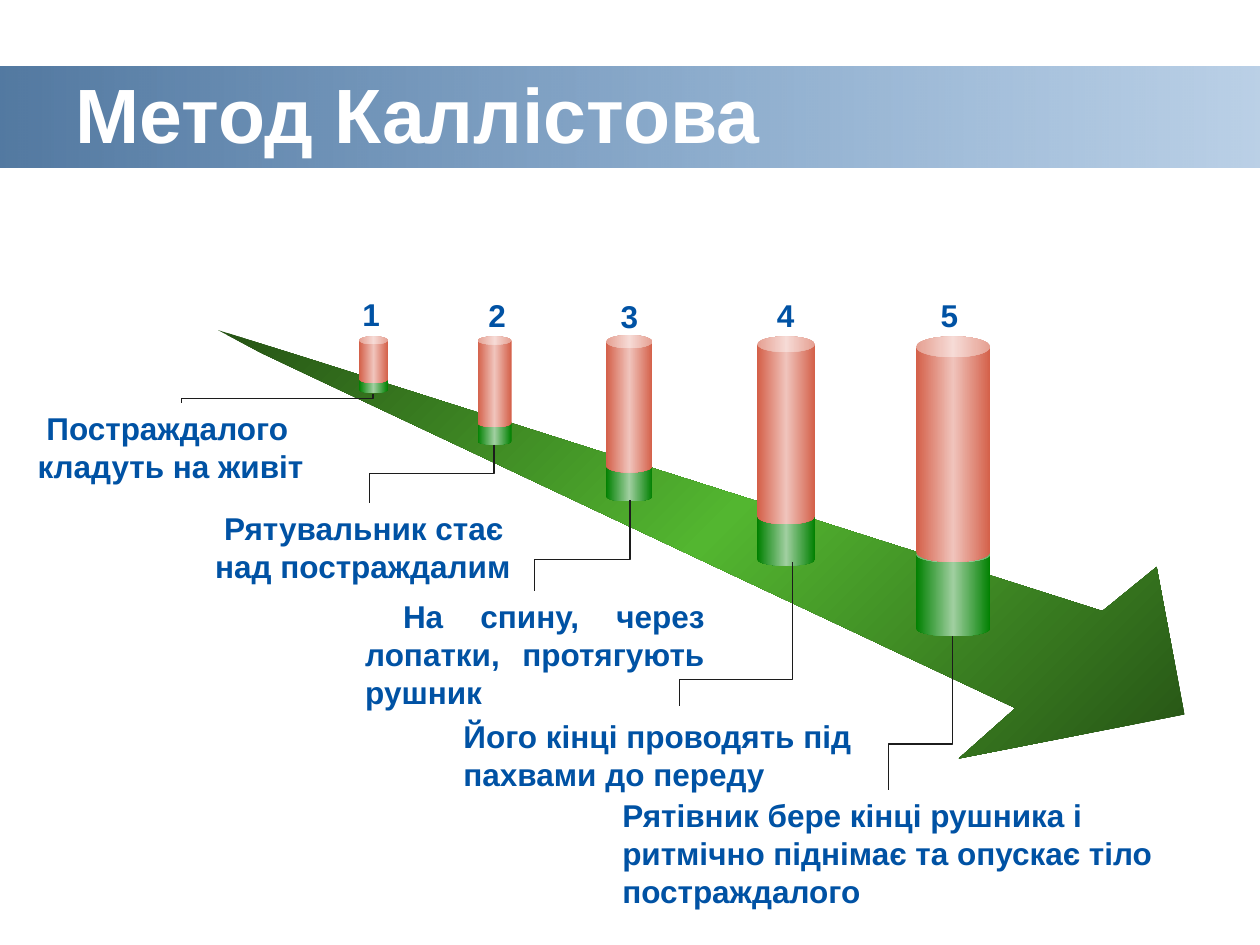
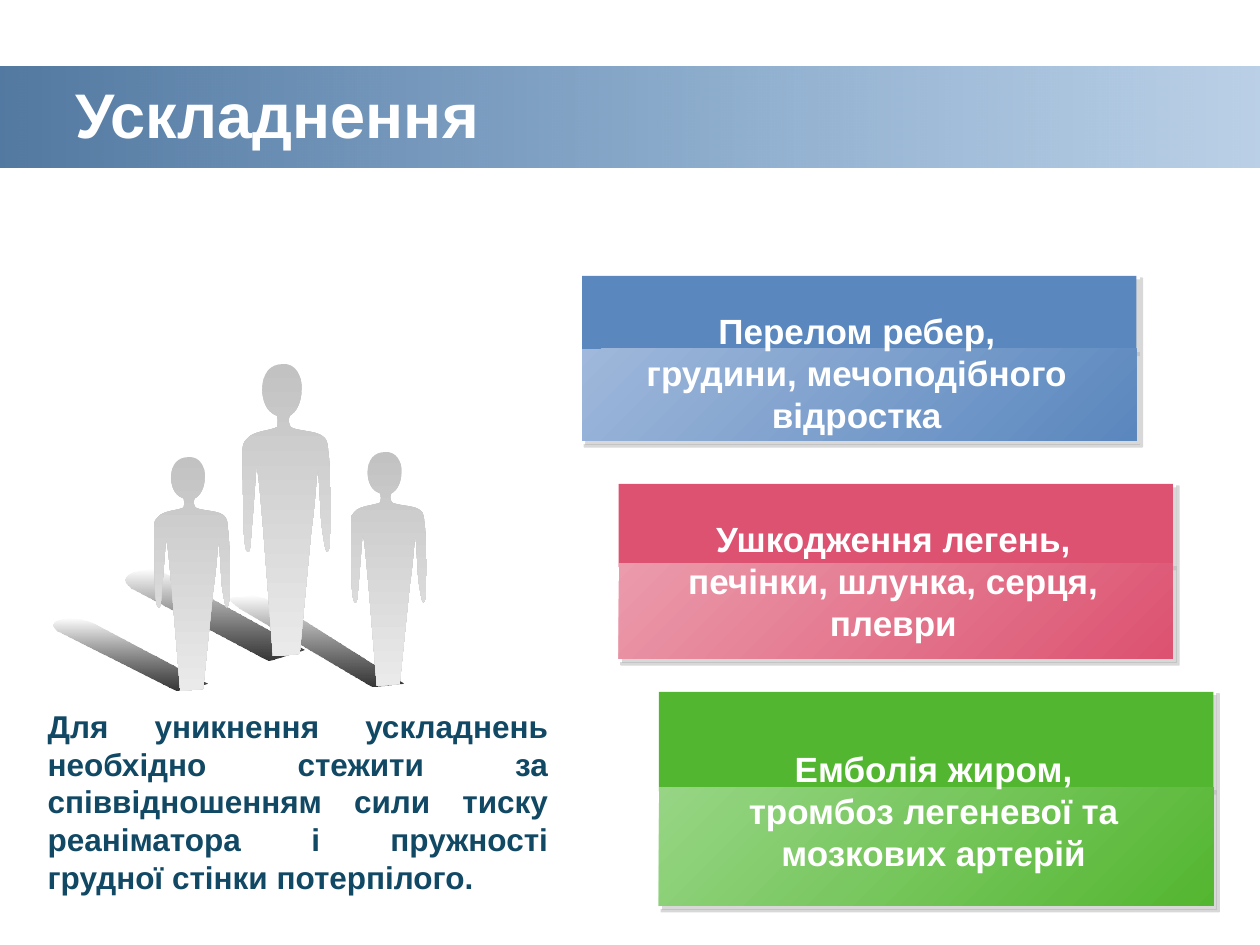
from dataclasses import dataclass

from lxml.etree import SubElement
from pptx import Presentation
from pptx.dml.color import RGBColor
from pptx.enum.shapes import MSO_CONNECTOR as CONNECTOR, MSO_SHAPE as SHAPE
from pptx.enum.text import MSO_ANCHOR as ANCHOR, PP_ALIGN as ALIGN
from pptx.oxml.ns import qn
from pptx.util import Pt

PX = 9144
FONT = "Arial"
WHITE = "FFFFFF"
BLUE = "0052A4"
TEAL = "114864"
INK = "1C1C1C"
SHADOW = "B2B2B2"
BAR = [(0, "003A75", 68), (100, BLUE, 27)]
ARROW = [(0, "265315"), (50, "53B630"), (100, "265315")]
GREEN_CAN = [(0, "008000"), (50, "A0CFA0"), (100, "008000")]
RED_CAN = [(0, "D45F48"), (50, "F0C4BC"), (100, "D45F48")]
BODY = [(0, "C2C2C2"), (100, "EAEAEA")]
CAST = [(0, "000000", 0), (100, "333333")]

ARROW_POINTS = [(73, 23), (0, 0), (34, 18), (633, 300), (588, 340),
                (767, 305), (745, 188), (702, 223)]
PERSON = [
    (50, 42), (57, 39, 62, 31, 62, 21), (63, 11, 56, 0, 43, 1),
    (30, 1, 22, 8, 22, 22), (23, 35, 30, 40, 37, 42),
    (38, 46, 38, 49, 37, 51), (30, 54, 13, 54, 7, 60),
    (0, 64, 2, 72, 2, 84), (3, 132), (4, 143, 5, 150, 7, 150),
    (11, 152, 10, 137, 12, 126), (16, 83), (18, 84, 20, 107, 23, 132),
    (33, 233), (60, 231), (72, 133), (77, 105, 77, 87, 79, 85),
    (82, 127), (84, 138, 86, 150, 88, 150), (91, 150, 92, 137, 92, 125),
    (93, 113, 91, 87, 90, 76), (88, 65, 90, 62, 83, 58),
    (77, 54, 56, 54, 51, 51), (49, 49, 48, 45, 50, 42),
]
CAST_SHADOWS = [
    (174, 470, [(146, 72), (121, 75), (17, 14), (0, 2, 15, 4, 20, 4),
                (25, 3, 28, 0, 49, 11), (146, 72)]),
    (89, 452, [(153, 63), (124, 72), (15, 15), (0, 3, 25, 0, 32, 0),
               (37, 0, 38, 1, 59, 12), (153, 63)]),
    (35, 487, [(130, 55), (105, 61), (11, 14), (0, 5, 19, 0, 39, 7),
               (130, 55)]),
]
PEOPLE = [(277, 358, (0.67, 0.8)), (191, 288, (0.78, 1)), (121, 362, (0.67, 0.8))]


@dataclass
class Step:
    number: str
    number_at: tuple
    left: int
    width: int
    red: tuple
    green: tuple
    leader: tuple
    label: str
    label_box: tuple
    indent: int = 0
    align: ALIGN = ALIGN.LEFT


STEPS = [
    Step("1", (247, 229), 285, 23, (267, 37, 0.27), (298, 14, 0.4),
         (296, 313, 144, 320, 0.5),
         "Постраждалого кладуть на живіт", (20, 320, 248, 71), 7),
    Step("2", (347, 230), 379, 27, (267, 72, 0.24), (333, 20, 0.27),
         (392, 353, 293, 399, 0.5),
         "Рятувальник стає над постраждалим", (161, 399, 263, 71), 7),
    Step("3", (452, 231), 481, 37, (266, 109, 0.28), (366, 32, 0.25),
         (500, 397, 424, 469, 0.65),
         "На спину, через лопатки, протягують рушник", (280, 469, 289, 101),
         30, ALIGN.JUSTIFY),
    Step("4", (576, 230), 601, 46, (267, 149, 0.27), (405, 44, 0.22),
         (629, 446, 539, 560, 0.82),
         "Його кінці проводять під пахвами до переду", (358, 564, 352, 71)),
    Step("5", (706, 230), 727, 59, (267, 179, 0.28), (434, 71, 0.21),
         (756, 505, 705, 627, 0.7),
         "Рятівник бере кінці рушника і ритмічно піднімає та опускає тіло "
         "постраждалого", (484, 627, 442, 101)),
]
PANELS = [
    ((461, 218, 443, 134), 61, 23, "5A87BE", "9FB8DB",
     "Перелом ребер, грудини, мечоподібного відростка"),
    ((490, 383, 443, 142), 66, 23, "DC5270", "EB9BAC",
     "Ушкодження легень, печінки, шлунка, серця, плеври"),
    ((522, 548, 443, 173), 79, 40, "53B630", "97D585",
     "Емболія жиром, тромбоз легеневої та мозкових артерій"),
]


def color(value):
    return RGBColor.from_string(value)


def emu(lengths):
    return [round(length * PX) for length in lengths]


def add_color(parent, value, alpha=100):
    node = SubElement(parent, qn("a:srgbClr"), val=value)
    if alpha < 100:
        SubElement(node, qn("a:alpha"), val=str(alpha * 1000))


def paint(shape, fill, angle=0, line=None, shadow=False):
    shape.shadow.inherit = False
    if isinstance(fill, str):
        shape.fill.solid()
        shape.fill.fore_color.rgb = color(fill)
    else:
        shape.fill.gradient()
        gradient = shape.element.spPr.find(qn("a:gradFill"))
        for child in list(gradient):
            gradient.remove(child)
        stops = SubElement(gradient, qn("a:gsLst"))
        for position, *tint in fill:
            add_color(SubElement(stops, qn("a:gs"), pos=str(position * 1000)), *tint)
        SubElement(gradient, qn("a:lin"), ang=str(angle * 60000), scaled="0")
    if line:
        shape.line.color.rgb = color(line)
        shape.line.width = Pt(0.75)
    else:
        shape.line.fill.background()
    if shadow:
        effects = shape.element.spPr.find(qn("a:effectLst"))
        outer = SubElement(effects, qn("a:outerShdw"), dist=str(Pt(2.8)),
                           dir=str(45 * 60000), algn="ctr", rotWithShape="0")
        add_color(outer, SHADOW, 50)
    return shape


def add_block(shapes, box, fill, kind=SHAPE.RECTANGLE, adjust=None, **style):
    shape = shapes.add_shape(kind, *emu(box))
    if adjust is not None:
        shape.adjustments[0] = adjust
    return paint(shape, fill, **style)


def add_text(shapes, box, text, size=18, tint=BLUE, align=ALIGN.LEFT,
             anchor=ANCHOR.TOP, indent=0):
    frame = shapes.add_textbox(*emu(box)).text_frame
    frame.word_wrap = True
    frame.vertical_anchor = anchor
    para = frame.paragraphs[0]
    para.alignment = align
    if indent:
        para._p.get_or_add_pPr().set("indent", str(indent * PX))
    span = para.add_run()
    span.text = text
    span.font.name = FONT
    span.font.size = Pt(size)
    span.font.bold = True
    span.font.color.rgb = color(tint)


def bend_segments(shape, outline):
    segments = list(shape.element.spPr.iter(qn("a:lnTo")))
    for node in outline[1:]:
        count = len(node) // 2
        group, segments = segments[:count], segments[count:]
        if count == 3:
            curve = group[0].makeelement(qn("a:cubicBezTo"))
            group[0].addprevious(curve)
            for segment in group:
                curve.append(segment[0])
                segment.getparent().remove(segment)


def add_outline(shapes, left, top, outline, fill, angle, zoom=(1, 1)):
    points = [emu((left + x * zoom[0], top + y * zoom[1]))
              for node in outline for x, y in zip(node[::2], node[1::2])]
    builder = shapes.build_freeform(*points[0], scale=1.0)
    builder.add_line_segments(points[1:], close=True)
    shape = builder.convert_to_shape()
    bend_segments(shape, outline)
    paint(shape, fill, angle)


def add_leader(shapes, start_x, start_y, end_x, end_y, bend):
    across, down = start_x - end_x, end_y - start_y
    left = (start_x + end_x - down) / 2
    top = (start_y + end_y - across) / 2
    leader = shapes.add_connector(
        CONNECTOR.ELBOW, *emu((left, top, left + down, top + across)))
    leader.line.color.rgb = color(INK)
    leader.line.width = Pt(0.75)
    properties = leader.element.spPr
    properties.find(qn("a:xfrm")).set("rot", str(90 * 60000))
    guides = properties.find(qn("a:prstGeom")).find(qn("a:avLst"))
    SubElement(guides, qn("a:gd"), name="adj1", fmla=f"val {round(bend * 100000)}")
    SubElement(properties, qn("a:effectLst"))


def add_bar(deck, layout):
    page = deck.slides.add_slide(layout)
    bar = add_block(page.shapes, (0, 53, 1000, 80), BAR)
    layout.shapes.element.append(bar.element)
    return page


def add_title(shapes, text, size):
    add_text(shapes, (50, 27, 650, 125), text, size=size, tint=WHITE,
             anchor=ANCHOR.MIDDLE)


def add_can(shapes, step, part, fill):
    top, height, adjust = part
    add_block(shapes, (step.left, top, step.width, height), fill,
              kind=SHAPE.CAN, adjust=adjust)


def add_panel(shapes, box, top_height, text_top, strong, pale, text):
    left, top, width, height = box
    group = shapes.add_group_shape().shapes
    add_block(group, box, WHITE, line=WHITE, shadow=True)
    add_block(group, (left + 1, top + 1, width - 3, top_height), strong, shadow=True)
    add_block(group, (left + 1, top + top_height - 2, width - 3, height - top_height),
              [(0, pale), (100, strong)], angle=45, shadow=True)
    add_text(shapes, (left + 39, top + text_top, 360, 111), text, size=20,
             tint=WHITE, align=ALIGN.CENTER)


def add_people(shapes):
    group = shapes.add_group_shape().shapes
    for left, top, outline in CAST_SHADOWS:
        add_outline(group, left, top, outline, CAST, 90)
    for left, top, zoom in PEOPLE:
        add_outline(group, left, top, PERSON, BODY, 90, zoom)


def build_method(shapes):
    add_outline(shapes, 173, 262, ARROW_POINTS, ARROW, 45)
    for step in STEPS:
        add_can(shapes, step, step.green, GREEN_CAN)
    for step in STEPS:
        add_text(shapes, (*step.number_at, 95, 40), step.number, align=ALIGN.CENTER)
    for step in STEPS:
        add_text(shapes, step.label_box, step.label, align=step.align,
                 indent=step.indent)
    for step in STEPS:
        add_leader(shapes, *step.leader)
    for step in reversed(STEPS):
        add_can(shapes, step, step.red, RED_CAN)
    add_title(shapes, "Метод Каллістова", 44)


def build_complications(shapes):
    add_title(shapes, "Ускладнення", 36)
    add_text(shapes, (28, 556, 417, 162),
             "Для уникнення ускладнень необхідно стежити за співвідношенням "
             "сили тиску реаніматора і пружності грудної стінки потерпілого.",
             tint=TEAL, align=ALIGN.JUSTIFY)
    for panel in PANELS:
        add_panel(shapes, *panel)
    add_people(shapes)


def main():
    deck = Presentation()
    deck.slide_width, deck.slide_height = emu((1000, 750))
    layout = deck.slide_layouts[6]
    build_method(add_bar(deck, layout).shapes)
    build_complications(deck.slides.add_slide(layout).shapes)
    deck.save("out.pptx")


if __name__ == "__main__":
    main()
